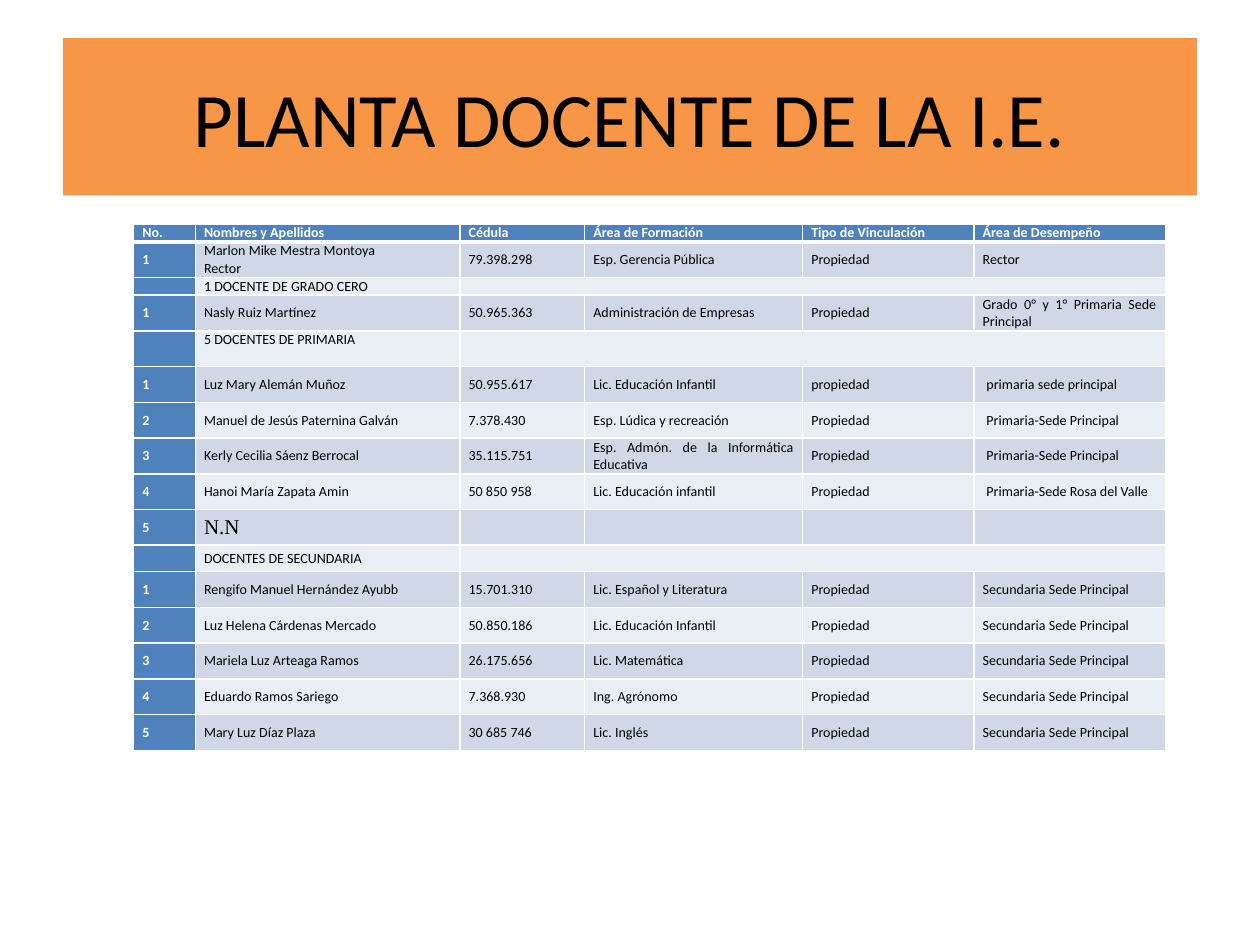
import pptx
import pptx.dml.color
import pptx.enum.text
import pptx.oxml
import pptx.oxml.ns
import pptx.util
from lxml import etree

Inches = pptx.util.Inches
PP_ALIGN = pptx.enum.text.PP_ALIGN
MSO_ANCHOR = pptx.enum.text.MSO_ANCHOR

COLUMNS = [0.49, 2.1, 0.99, 1.73, 1.36, 1.52]
HEADER = ["No.", "Nombres y Apellidos", "Cédula", "Área de Formación",
          "Tipo de Vinculación", "Área de Desempeño"]
SECONDARY = "Secundaria Sede Principal"

# Section rows hold only their title in the second column
STAFF = [
    ["1", "Marlon Mike Mestra Montoya\nRector", "79.398.298",
     "Esp. Gerencia Pública", "Propiedad", "Rector"],
    ["", "1 DOCENTE DE GRADO CERO"],
    ["1", "Nasly Ruiz Martínez", "50.965.363", "Administración de Empresas",
     "Propiedad", "Grado 0° y 1° Primaria Sede Principal"],
    ["", "5 DOCENTES DE PRIMARIA"],
    ["1", "Luz Mary Alemán Muñoz", "50.955.617", "Lic. Educación Infantil",
     "propiedad", "primaria sede principal"],
    ["2", "Manuel de Jesús Paternina Galván", "7.378.430",
     "Esp. Lúdica y recreación", "Propiedad", "Primaria-Sede Principal"],
    ["3", "Kerly Cecilia Sáenz Berrocal", "35.115.751",
     "Esp. Admón. de la Informática Educativa", "Propiedad",
     "Primaria-Sede Principal"],
    ["4", "Hanoi María Zapata Amin", "50 850 958", "Lic. Educación infantil",
     "Propiedad", "Primaria-Sede Rosa del Valle"],
    ["5", "N.N", "", "", "", ""],
    ["", "DOCENTES DE SECUNDARIA"],
    ["1", "Rengifo Manuel Hernández Ayubb", "15.701.310",
     "Lic. Español y Literatura", "Propiedad", SECONDARY],
    ["2", "Luz Helena Cárdenas Mercado", "50.850.186",
     "Lic. Educación Infantil", "Propiedad", SECONDARY],
    ["3", "Mariela Luz Arteaga Ramos", "26.175.656", "Lic. Matemática",
     "Propiedad", SECONDARY],
    ["4", "Eduardo Ramos Sariego", "7.368.930", "Ing. Agrónomo",
     "Propiedad", SECONDARY],
    ["5", "Mary Luz Díaz Plaza", "30 685 746", "Lic. Inglés",
     "Propiedad", SECONDARY],
]


def rgb(value):
    return pptx.dml.color.RGBColor.from_string(value)


def write(tf, text, size=8, font="Calibri", color="000000", bold=False,
          align=PP_ALIGN.JUSTIFY):
    """Write one paragraph for each line of text."""
    for i, line in enumerate(text.split("\n")):
        p = tf.paragraphs[0] if i == 0 else tf.add_paragraph()
        p.alignment = align
        if not line:
            # Keeps an empty cell from growing to the default text size
            end = etree.SubElement(p._p, pptx.oxml.ns.qn("a:endParaRPr"))
            end.set("sz", str(size * 100))
            continue
        r = p.add_run()
        r.text = line
        r.font.size = pptx.util.Pt(size)
        r.font.name = font
        r.font.bold = bold
        r.font.color.rgb = rgb(color)


class Deck:
    accent = "F79646"
    head = "4F81BD"
    bands = ["E9EDF4", "D0D8E8"]
    white = "FFFFFF"

    def __init__(self):
        self.prs = pptx.Presentation()
        self.prs.slide_width, self.prs.slide_height = Inches(10), Inches(7.5)
        self.s = self.prs.slides.add_slide(self.prs.slide_layouts[5])

    def title(self, text, x, y, w, h):
        sp = self.s.shapes.title
        sp.left, sp.top, sp.width, sp.height = map(Inches, (x, y, w, h))
        sp.fill.solid()
        sp.fill.fore_color.rgb = rgb(self.accent)
        sp.text_frame.vertical_anchor = MSO_ANCHOR.MIDDLE
        write(sp.text_frame, text, size=44, align=PP_ALIGN.CENTER)

    def table(self, x, y, columns, heights):
        frame = self.s.shapes.add_table(
            len(heights), len(columns), Inches(x), Inches(y),
            Inches(sum(columns)), Inches(sum(heights)))
        for column, width in zip(frame.table.columns, columns):
            column.width = Inches(width)
        for row, height in zip(frame.table.rows, heights):
            row.height = Inches(height)
        return frame.table

    def cell(self, cell, text, fill, bottom=1, indent=0.07,
             anchor=MSO_ANCHOR.MIDDLE, **style):
        cell.margin_left, cell.margin_right = Inches(indent), Inches(0.07)
        cell.margin_top = cell.margin_bottom = 0
        cell.vertical_anchor = anchor
        self.borders(cell, bottom)
        cell.fill.solid()
        cell.fill.fore_color.rgb = rgb(fill)
        write(cell.text_frame, text, **style)

    def borders(self, cell, bottom):
        tc_pr = cell._tc.get_or_add_tcPr()
        for side, width in (("L", 1), ("R", 1), ("T", 1), ("B", bottom)):
            tc_pr.append(pptx.oxml.parse_xml(
                f'<a:ln{side} {pptx.oxml.ns.nsdecls("a")} '
                f'w="{pptx.util.Pt(width)}"><a:solidFill>'
                f'<a:srgbClr val="{self.white}"/></a:solidFill></a:ln{side}>'))


def row_heights(total):
    """Fixed heights for the thin rows; the others share the rest."""
    thin = {0: 0.14, 2: 0.14, 10: 0.21}
    count = len(STAFF) + 1
    regular = (total - sum(thin.values())) / (count - len(thin))
    return [thin.get(i, regular) for i in range(count)]


def main():
    deck = Deck()
    deck.title("PLANTA DOCENTE DE LA I.E.", 0.5, 0.3, 9, 1.25)
    table = deck.table(1.06, 1.78, COLUMNS, row_heights(4.18))
    label = {"color": deck.white, "bold": True}

    # Header row
    for c, text in enumerate(HEADER):
        deck.cell(table.cell(0, c), text, deck.head, bottom=3, **label)

    # Staff and section rows
    for i, values in enumerate(STAFF, start=1):
        section = len(values) == 2
        texts = values + [""] * (len(COLUMNS) - len(values))
        for c, text in enumerate(texts):
            style = dict(label) if c == 0 else {}
            if text == "N.N":
                style.update(size=12, font="Times New Roman")
            if text.lower().startswith("primaria"):
                style["indent"] = 0.1
            if text == "5 DOCENTES DE PRIMARIA":
                style["anchor"] = MSO_ANCHOR.TOP
            fill = deck.head if c == 0 else deck.bands[i % 2]
            deck.cell(table.cell(i, c), text, fill, **style)
        if section:
            table.cell(i, 2).merge(table.cell(i, 5))

    deck.prs.save("out.pptx")


if __name__ == "__main__":
    main()
